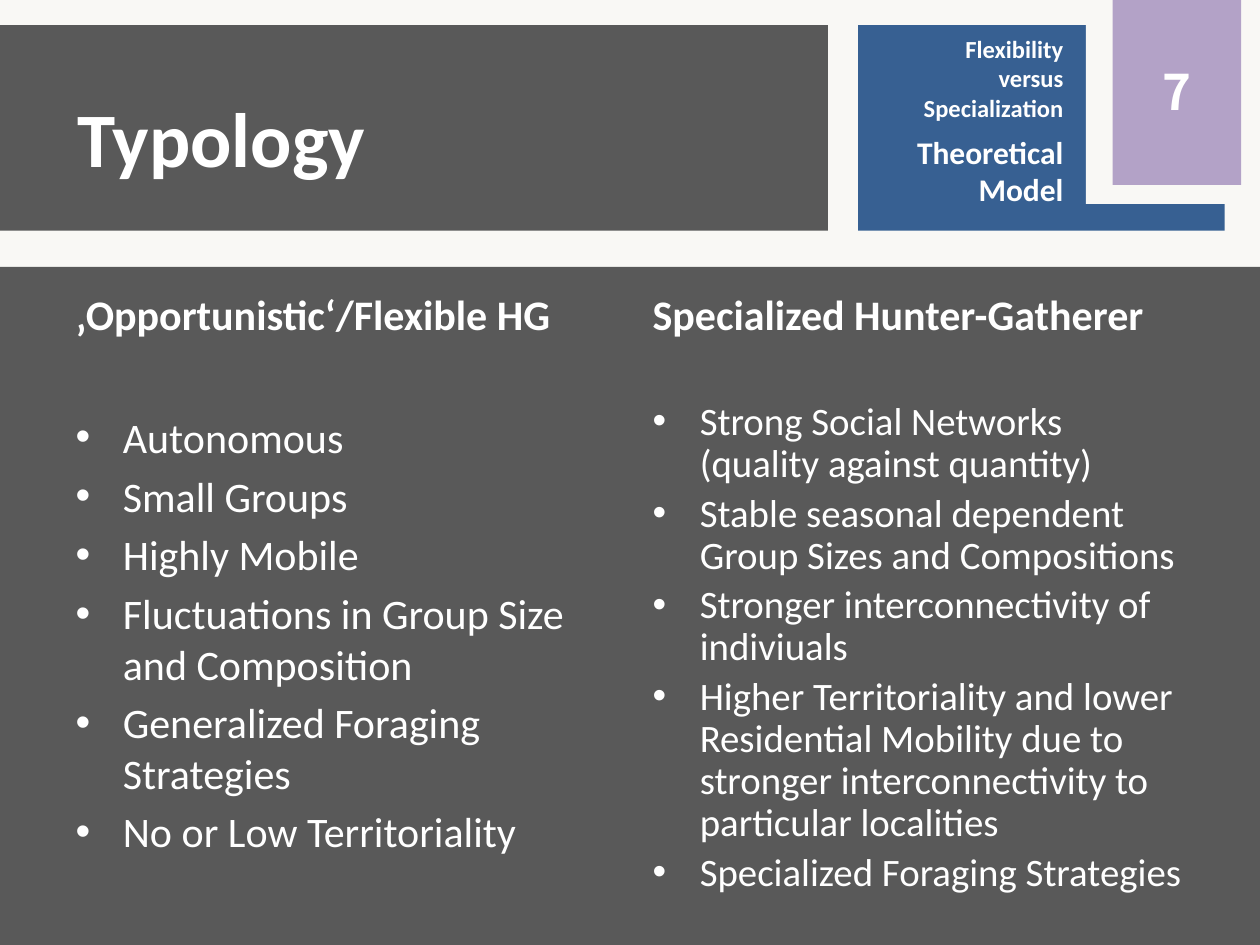
from pptx import Presentation
from pptx.dml.color import RGBColor
from pptx.enum.shapes import MSO_SHAPE
from pptx.enum.text import MSO_ANCHOR, MSO_AUTO_SIZE, PP_ALIGN
from pptx.util import Cm, Pt

RECTANGLE = MSO_SHAPE.RECTANGLE
TOP, MIDDLE, BOTTOM = MSO_ANCHOR.TOP, MSO_ANCHOR.MIDDLE, MSO_ANCHOR.BOTTOM
LEFT, CENTER, RIGHT = PP_ALIGN.LEFT, PP_ALIGN.CENTER, PP_ALIGN.RIGHT
NO_FIT = MSO_AUTO_SIZE.NONE
COMPARISON_LAYOUT = 4

WIDTH, HEIGHT = 25.4, 19.05
CREAM, GREY, BLUE, PURPLE, WHITE = "F9F8F5", "595959", "376092", "B3A2C7", "FFFFFF"
HEADING_HEIGHT = 1.78

FLEXIBLE = [
    "Autonomous",
    "Small Groups",
    "Highly Mobile",
    "Fluctuations in Group Size and Composition",
    "Generalized Foraging Strategies",
    "No or Low Territoriality",
]
SPECIALIZED = [
    "Strong Social Networks (quality against quantity)",
    "Stable seasonal dependent Group Sizes and Compositions",
    "Stronger interconnectivity of indiviuals",
    "Higher Territoriality and lower Residential Mobility due to "
    "stronger interconnectivity to particular localities",
    "Specialized Foraging Strategies",
]


def color(hex_string):
    return RGBColor.from_string(hex_string)


def add_block(slide, left, top, width, height, fill):
    block = slide.shapes.add_shape(RECTANGLE, Cm(left), Cm(top), Cm(width), Cm(height))
    block.shadow.inherit = False
    block.fill.solid()
    block.fill.fore_color.rgb = color(fill)
    block.line.fill.background()
    return block


def style_paragraph(paragraph, size, bold, align, font="Calibri"):
    paragraph.alignment = align
    for run in paragraph.runs:
        run.font.name = font
        run.font.size = Pt(size)
        run.font.bold = bold
        run.font.color.rgb = color(WHITE)


def fill_placeholder(placeholder, box, text, size, bold, anchor):
    placeholder.left, placeholder.top, placeholder.width, placeholder.height = map(Cm, box)
    frame = placeholder.text_frame
    frame.text = text
    frame.auto_size = NO_FIT
    frame.vertical_anchor = anchor
    for paragraph in frame.paragraphs:
        style_paragraph(paragraph, size, bold, LEFT)
    placeholder.element.getparent().append(placeholder.element)
    return frame


def add_title_bar(slide, left, top, width, height):
    add_block(slide, left, top, width, height, GREY)
    title_box = (left + 1.3, top + 0.2, 21.59, 4.09)
    fill_placeholder(slide.shapes.title, title_box, "Typology", 44, True, MIDDLE)


def add_chapter_marker(slide, left, top, width, height):
    add_block(slide, left, top, width, height, BLUE)
    add_block(slide, left + 4.59, top - 0.59, 3.51, 4.19, CREAM)

    page_number = add_block(slide, left + 5.13, top - 0.59, 2.59, 3.81, PURPLE).text_frame
    page_number.text = "7"
    page_number.vertical_anchor = MIDDLE
    style_paragraph(page_number.paragraphs[0], 28, True, CENTER, "Noto Sans CJK SC")

    chapter = add_block(slide, left, top + 0.05, 4.39, 3.81, BLUE).text_frame
    chapter.text = "Flexibility\vversus\vSpecialization\nTheoretical\vModel"
    chapter.vertical_anchor = TOP
    for paragraph, size in zip(chapter.paragraphs, (14, 18)):
        paragraph.space_after = Pt(6)
        style_paragraph(paragraph, size, True, RIGHT)


def add_type_column(slide, indexes, box, heading, traits, size, inset, spacing=None):
    left, top, width, height = box
    holders = {holder.placeholder_format.idx: holder for holder in slide.placeholders}
    heading_holder, traits_holder = (holders[index] for index in indexes)
    heading_box = (left, top, width, HEADING_HEIGHT)
    fill_placeholder(heading_holder, heading_box, heading, 24, True, BOTTOM)

    traits_box = (left, top + HEADING_HEIGHT, width, height - HEADING_HEIGHT)
    frame = fill_placeholder(traits_holder, traits_box, "\n".join(traits), size, False, TOP)
    frame.margin_top = Cm(inset)
    for paragraph in frame.paragraphs:
        paragraph.line_spacing = spacing


def add_comparison(slide, left, top, width, height):
    add_block(slide, left, top, width, height, GREY)
    column_top = top - 0.2
    add_type_column(slide, (1, 2), (left + 1.27, column_top, 11.23, 12.75),
                    "‚Opportunistic‘/Flexible HG", FLEXIBLE, 24, 1.33)
    add_type_column(slide, (3, 4), (left + 12.9, column_top, 11.23, 13.46),
                    "Specialized Hunter-Gatherer", SPECIALIZED, 22.2, 1.14, 0.9)


def main():
    presentation = Presentation()
    presentation.slide_width, presentation.slide_height = Cm(WIDTH), Cm(HEIGHT)
    slide = presentation.slides.add_slide(presentation.slide_layouts[COMPARISON_LAYOUT])
    add_block(slide, 0, 0, WIDTH, HEIGHT, CREAM)
    add_title_bar(slide, 0, 0.51, 16.69, 4.14)
    add_chapter_marker(slide, 17.3, 0.51, 7.39, 4.14)
    add_comparison(slide, 0, 5.38, WIDTH, HEIGHT - 5.38)
    presentation.save("out.pptx")


if __name__ == "__main__":
    main()
